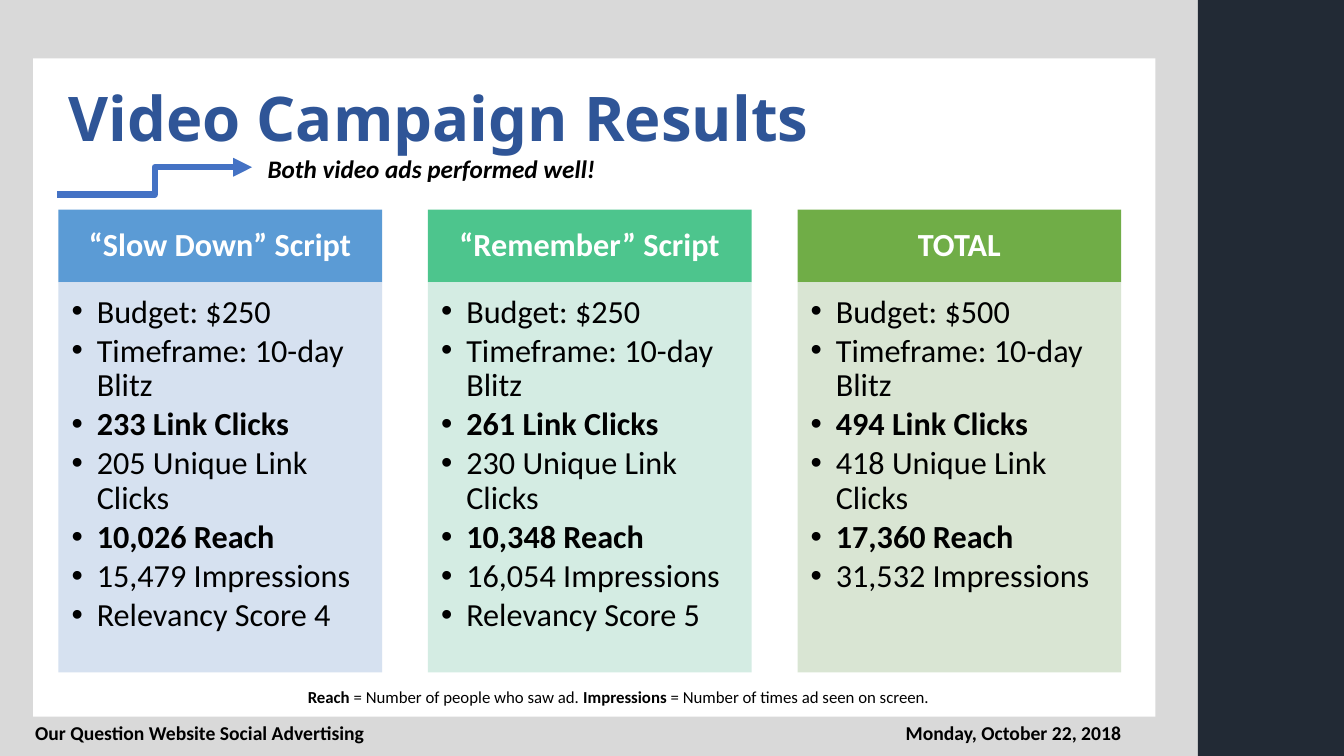
from pptx import Presentation
from pptx.dml.color import RGBColor
from pptx.enum.shapes import MSO_CONNECTOR, MSO_SHAPE
from pptx.enum.text import MSO_ANCHOR, PP_ALIGN
from pptx.oxml.ns import qn
from pptx.util import Inches, Pt
from lxml.etree import SubElement

COLORS = {
    "backdrop": "D9D9D9", "white": "FFFFFF", "black": "000000",
    "sidebar": "222A35", "title": "2F5597", "arrow": "4472C4",
}
CARDS = [
    ("“Slow Down” Script", "5B9BD5", "D2DEEF",
     ["Budget: $250", "Timeframe: 10-day Blitz", "233 Link Clicks",
      "205 Unique Link Clicks", "10,026 Reach", "15,479 Impressions",
      "Relevancy Score 4"]),
    ("“Remember” Script", "4DC58D", "D0EAE1",
     ["Budget: $250", "Timeframe: 10-day Blitz", "261 Link Clicks",
      "230 Unique Link Clicks", "10,348 Reach", "16,054 Impressions",
      "Relevancy Score 5"]),
    ("TOTAL", "70AD47", "D5E3CF",
     ["Budget: $500", "Timeframe: 10-day Blitz", "494 Link Clicks",
      "418 Unique Link Clicks", "17,360 Reach", "31,532 Impressions"]),
]
BOLD_ROWS = (2, 4)
CARD_LEFT, CARD_STEP, CARD_WIDTH = 0.58, 3.665, 3.21
HEADER_TOP, HEADER_HEIGHT, BODY_HEIGHT = 2.08, 0.72, 3.87


def format_run(run, size, color, bold=True, italic=False, name="Calibri"):
    """Set the font of one run."""
    font = run.font
    font.size, font.name, font.bold, font.italic = Pt(size), name, bold, italic
    font.color.rgb = RGBColor.from_string(color)


def add_panel(slide, left, top, width, height, color, opacity=100):
    """Add a filled rectangle without a line."""
    shape = slide.shapes.add_shape(
        MSO_SHAPE.RECTANGLE, Inches(left), Inches(top), Inches(width), Inches(height))
    shape.shadow.inherit = False
    shape.fill.solid()
    shape.fill.fore_color.rgb = RGBColor.from_string(color)
    shape.line.fill.background()
    if opacity < 100:
        fill_color = shape._element.spPr.find(qn("a:solidFill"))[0]
        SubElement(fill_color, qn("a:alpha"), val=str(opacity * 1000))
    return shape


def set_margins(text_frame, left, top, right, bottom):
    """Set the inner margins of a text frame."""
    text_frame.margin_left, text_frame.margin_top = Inches(left), Inches(top)
    text_frame.margin_right, text_frame.margin_bottom = Inches(right), Inches(bottom)


def add_text(slide, left, top, width, height, text, size, color=COLORS["black"],
             align=PP_ALIGN.LEFT, **style):
    """Add a wrapped text box with one line of text."""
    box = slide.shapes.add_textbox(
        Inches(left), Inches(top), Inches(width), Inches(height))
    box.text_frame.word_wrap = True
    box.text_frame.text = text
    paragraph = box.text_frame.paragraphs[0]
    paragraph.alignment = align
    format_run(paragraph.runs[0], size, color, **style)
    return box


def add_header(slide, left, text, color):
    """Add the coloured heading of a card."""
    shape = add_panel(slide, left, HEADER_TOP, CARD_WIDTH, HEADER_HEIGHT, color)
    frame = shape.text_frame
    frame.text = text
    frame.vertical_anchor = MSO_ANCHOR.MIDDLE
    set_margins(frame, 0.18, 0.1, 0.18, 0.1)
    paragraph = frame.paragraphs[0]
    paragraph.alignment, paragraph.line_spacing = PP_ALIGN.CENTER, 0.9
    format_run(paragraph.runs[0], 23, COLORS["white"])


def add_body(slide, left, items, color):
    """Add the bulleted results of a card."""
    shape = add_panel(slide, left, HEADER_TOP + HEADER_HEIGHT, CARD_WIDTH,
                      BODY_HEIGHT, color, opacity=90)
    frame = shape.text_frame
    frame.text = "\n".join(items)
    frame.vertical_anchor = MSO_ANCHOR.TOP
    set_margins(frame, 0.13, 0.13, 0.18, 0.2)
    for row, paragraph in enumerate(frame.paragraphs):
        paragraph.alignment, paragraph.line_spacing = PP_ALIGN.LEFT, 0.9
        paragraph.space_after = Pt(3)
        properties = paragraph._p.get_or_add_pPr()
        properties.set("marL", str(Inches(0.25)))
        properties.set("indent", str(Inches(-0.25)))
        SubElement(properties, qn("a:buFont"), typeface="Arial")
        SubElement(properties, qn("a:buChar"), char="•")
        format_run(paragraph.runs[0], 23, COLORS["black"], bold=row in BOLD_ROWS)


def add_footnote(slide):
    """Add the definitions below the cards."""
    box = add_text(slide, 1.23, 6.76, 9.81, 0.3, "Reach", 12, align=PP_ALIGN.CENTER)
    paragraph = box.text_frame.paragraphs[0]
    for text, bold in [(" = Number of people who saw ad. ", False),
                       ("Impressions", True),
                       (" = Number of times ad seen on screen.", False)]:
        run = paragraph.add_run()
        run.text = text
        format_run(run, 12, COLORS["black"], bold=bold)


def add_step_arrow(slide):
    """Add the stepped arrow that leads to the subtitle."""
    connector = slide.shapes.add_connector(
        MSO_CONNECTOR.ELBOW, Inches(0.57), Inches(1.93), Inches(2.5), Inches(1.66))
    connector.line.color.rgb = RGBColor.from_string(COLORS["arrow"])
    connector.line.width = Pt(4.5)
    SubElement(connector.line._get_or_add_ln(), qn("a:tailEnd"), type="triangle")
    SubElement(connector._element.spPr, qn("a:effectLst"))


def main():
    """Build the campaign results slide."""
    presentation = Presentation()
    presentation.slide_width, presentation.slide_height = Inches(13.33), Inches(7.5)
    slide = presentation.slides.add_slide(presentation.slide_layouts[6])

    add_panel(slide, 0, 0, 11.88, 7.5, COLORS["backdrop"])
    add_panel(slide, 0.33, 0.58, 11.13, 6.53, COLORS["white"])
    add_panel(slide, 11.88, 0, 1.45, 7.5, COLORS["sidebar"])

    title = add_text(slide, 0.58, 0.58, 10.54, 1.26, "Video Campaign Results", 44,
                     COLORS["title"], name="Noto Sans")
    title.text_frame.vertical_anchor = MSO_ANCHOR.MIDDLE
    title.text_frame.paragraphs[0].line_spacing = 0.9
    add_footnote(slide)
    add_text(slide, 0.53, 1.47, 7.5, 0.4, "Both video ads performed well!", 18,
             align=PP_ALIGN.CENTER, italic=True)

    for column, (heading, header_color, body_color, items) in enumerate(CARDS):
        left = CARD_LEFT + column * CARD_STEP
        add_header(slide, left, heading, header_color)
        add_body(slide, left, items, body_color)

    add_text(slide, 0.25, 7.1, 5.22, 0.34,
             "Our Question Website Social Advertising", 14)
    add_text(slide, 6, 7.1, 5.22, 0.34, "Monday, October 22, 2018", 14,
             align=PP_ALIGN.RIGHT)
    add_step_arrow(slide)
    presentation.save("out.pptx")


if __name__ == "__main__":
    main()
